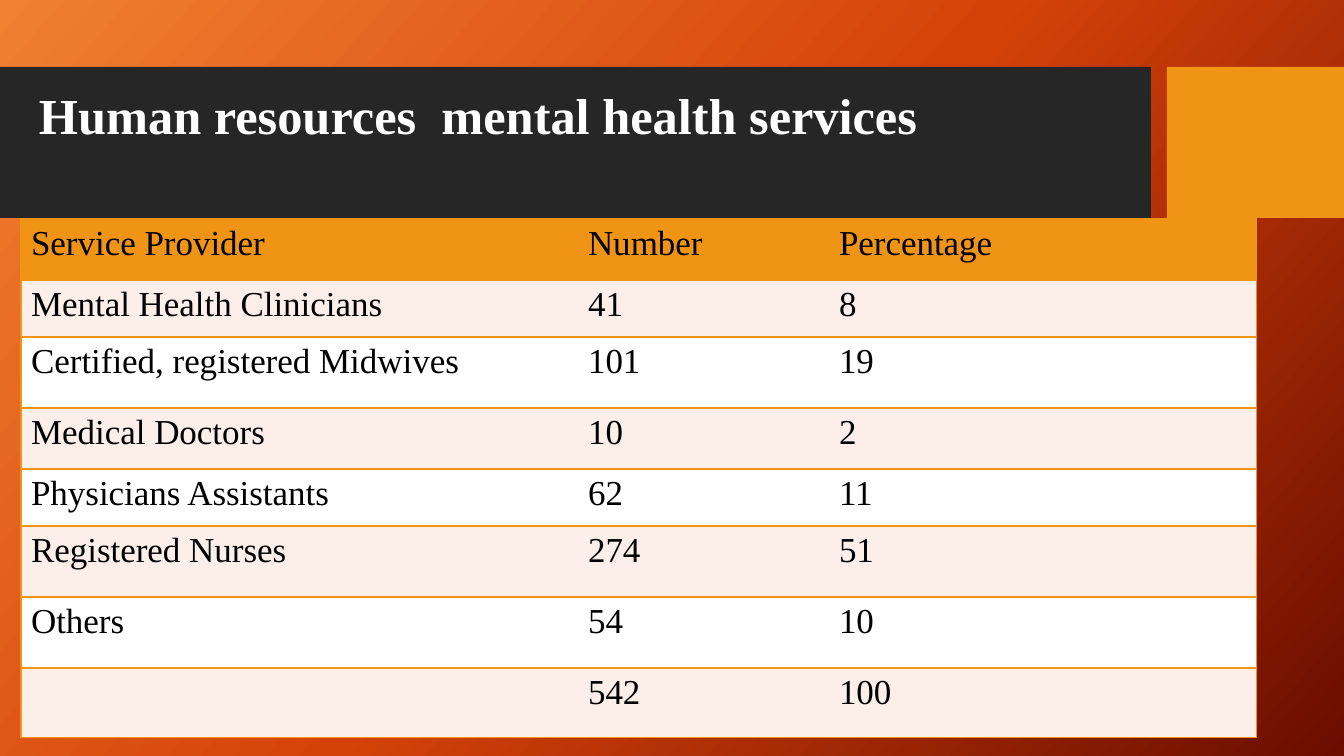
from copy import deepcopy

from pptx import Presentation
from pptx.dml.color import RGBColor
from pptx.enum.shapes import MSO_SHAPE as Shape
from pptx.enum.text import MSO_ANCHOR as Anchor
from pptx.oxml.ns import qn
from pptx.oxml.xmlchemy import OxmlElement as new_element
from pptx.util import Pt

EMU_PER_PX = 914400 / 100.8
FONT = "Times New Roman"
COLORS = {
    "glow": "F18031",
    "flame": "D54209",
    "ember": "6A0D00",
    "band": "262626",
    "accent": "F09415",
    "tint": "FCEEE8",
    "white": "FFFFFF",
    "black": "000000",
}
COLUMN_WIDTHS = (557, 251, 428)
ROW_HEIGHTS = (61, 57, 71, 61, 57, 71, 71, 70)
STAFF = (
    ("Service Provider", "Number", "Percentage"),
    ("Mental Health Clinicians", "41", "8"),
    ("Certified, registered Midwives", "101", "19"),
    ("Medical Doctors", "10", "2"),
    ("Physicians Assistants", "62", "11"),
    ("Registered Nurses", "274", "51"),
    ("Others", "54", "10"),
    ("", "542", "100"),
)


def px(*lengths):
    return [round(length * EMU_PER_PX) for length in lengths]


def color(name):
    return RGBColor.from_string(COLORS[name])


def set_background(page):
    fill = page.background.fill
    fill.gradient()
    fill.gradient_angle = 360 - 42
    stop_list = page.element.find(".//" + qn("a:gsLst"))
    stop_list.append(deepcopy(stop_list[-1]))
    stops = zip(fill.gradient_stops, (0, 0.5, 1), ("glow", "flame", "ember"))
    for stop, position, name in stops:
        stop.position = position
        stop.color.rgb = color(name)


def add_block(page, left, top, width, height, fill):
    block = page.shapes.add_shape(Shape.RECTANGLE, *px(left, top, width, height))
    block.shadow.inherit = False
    block.fill.solid()
    block.fill.fore_color.rgb = color(fill)
    block.line.fill.background()


def style_runs(para, size, name, bold=False):
    for span in para.runs:
        span.font.name = FONT
        span.font.size = Pt(size)
        span.font.bold = bold
        span.font.color.rgb = color(name)


def add_title(page, text, left, top, width, height):
    box = page.shapes.add_textbox(*px(left, top, width, height))
    frame = box.text_frame
    frame.word_wrap = True
    frame.vertical_anchor = Anchor.MIDDLE
    frame.text = text
    para = frame.paragraphs[0]
    para.line_spacing = 0.9
    style_runs(para, 36, "white", bold=True)


def set_borders(cell, visible_sides):
    """Draw the given sides (letters of L, R, T, B) and hide the others."""
    properties = cell._tc.get_or_add_tcPr()
    for side in "LRTB":
        line = new_element(f"a:ln{side}")
        line.set("w", str(Pt(1)))
        if side in visible_sides:
            paint = new_element("a:solidFill")
            tone = new_element("a:srgbClr")
            tone.set("val", COLORS["accent"])
            paint.append(tone)
        else:
            paint = new_element("a:noFill")
        line.append(paint)
        properties.append(line)


def add_staff_table(page, left, top):
    size = px(sum(COLUMN_WIDTHS), sum(ROW_HEIGHTS))
    table = page.shapes.add_table(
        len(STAFF), len(COLUMN_WIDTHS), *px(left, top), *size
    ).table
    for column, width in zip(table.columns, px(*COLUMN_WIDTHS)):
        column.width = width
    for row, height in zip(table.rows, px(*ROW_HEIGHTS)):
        row.height = height
    for row_index, values in enumerate(STAFF):
        band = "tint" if row_index % 2 else "white"
        fill = band if row_index else "accent"
        for column_index, value in enumerate(values):
            cell = table.cell(row_index, column_index)
            cell.text = value
            style_runs(cell.text_frame.paragraphs[0], 25, "black")
            set_borders(cell, "TB" + ("L", "", "R")[column_index])
            cell.fill.solid()
            cell.fill.fore_color.rgb = color(fill)


def main():
    deck = Presentation()
    deck.slide_width, deck.slide_height = px(1344, 756)
    page = deck.slides.add_slide(deck.slide_layouts[6])
    set_background(page)
    add_block(page, 0, 67, 1151, 151, "band")
    add_block(page, 1167, 67, 177, 151, "accent")
    add_title(page, "Human resources  mental health services", 29, 62, 1128, 113)
    add_staff_table(page, 21, 219)
    deck.save("out.pptx")


if __name__ == "__main__":
    main()
